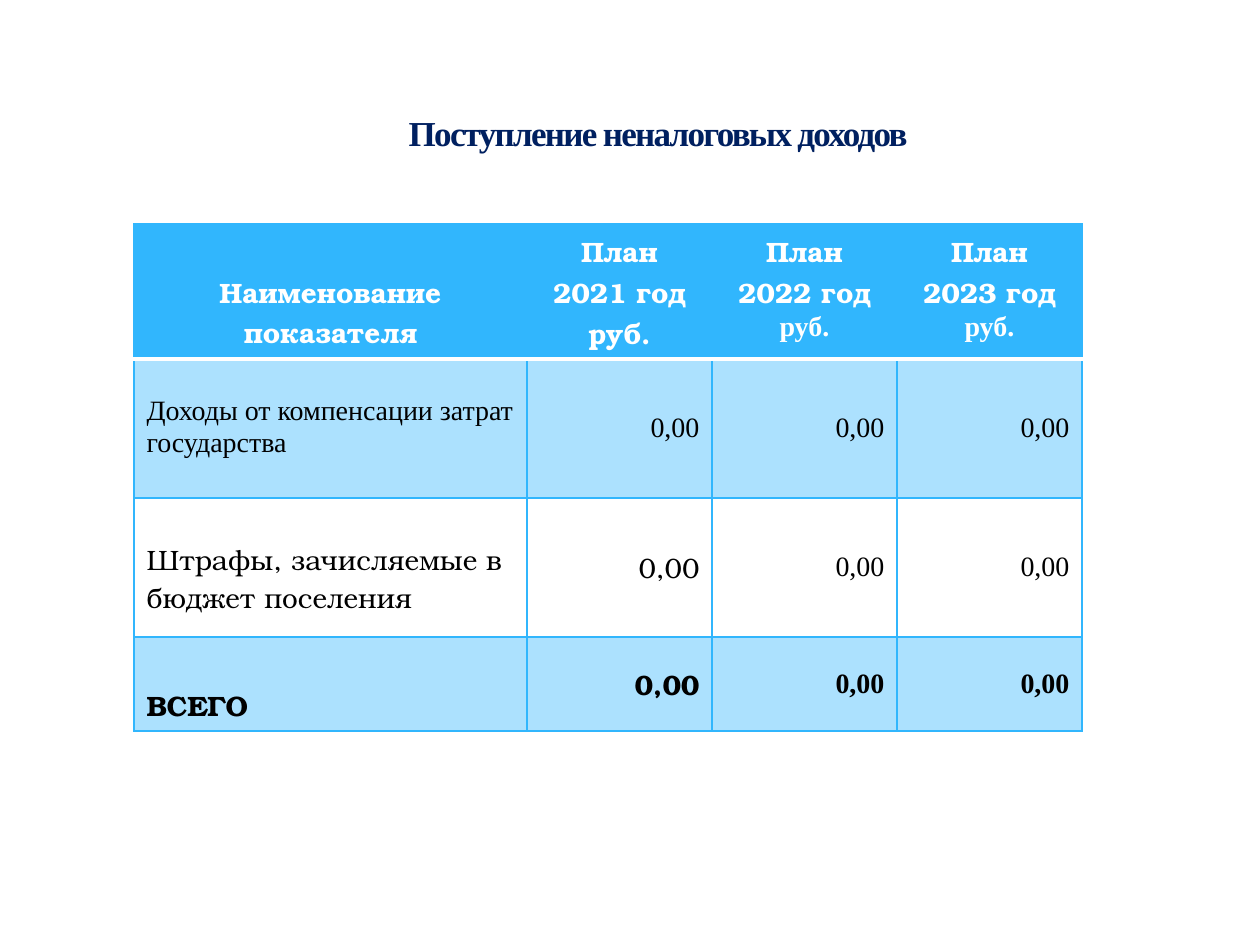
from lxml.etree import SubElement
from pptx import Presentation
from pptx.dml.color import RGBColor
from pptx.enum.text import MSO_ANCHOR as Anchor, PP_ALIGN as Align
from pptx.oxml import parse_xml
from pptx.oxml.ns import nsdecls, qn
from pptx.util import Pt

COLORS = {"navy": "002060", "blue": "31B6FD", "white": "FFFFFF", "black": "000000"}
SERIF, BONUM = "Times New Roman", "TeX Gyre Bonum"

TITLE = "Поступление неналоговых доходов"
# Each cell is a list of (text, font) paragraphs.
HEAD = [
    [("Наименование показателя", BONUM)],
    [("План 2021 год", BONUM), ("руб.", BONUM)],
    [("План 2022 год", BONUM), ("руб.", SERIF)],
    [("План 2023 год", BONUM), ("руб.", SERIF)],
]
# Label and its font, then the values with the font of the first one.
BODY = [
    ("Доходы от компенсации затрат государства", SERIF, SERIF),
    ("Штрафы, зачисляемые в бюджет поселения", BONUM, BONUM),
    ("ВСЕГО", BONUM, BONUM),
]
VALUES = [["0,00"] * 3 for _ in BODY]
COLS = [393, 185, 185, 185]
ROWS = [135, 139, 139, 94]
DROPS = [47, 37, 43, 47]  # top margin of the label in each row


def px(n):
    return round(n * 914400 / 126)


def color(name):
    return RGBColor.from_string(COLORS[name])


def border(cell, row):
    """Blue edges all round, with a thick white rule under the header."""
    props = cell._tc.get_or_add_tcPr()
    for i, side in enumerate("LRTB"):
        rule = (row, side) in ((0, "B"), (1, "T"))
        tint, width = ("white", 3) if rule else ("blue", 1)
        props.insert(i, parse_xml(
            f'<a:ln{side} {nsdecls("a")} w="{Pt(width)}"><a:solidFill>'
            f'<a:srgbClr val="{COLORS[tint]}"/></a:solidFill></a:ln{side}>'))


def paint(cell, row):
    """Solid header, then pale and clear rows in turn."""
    if row == 2:
        cell.fill.background()
        return
    cell.fill.solid()
    cell.fill.fore_color.rgb = color("blue")
    if row:
        tint = cell._tc.tcPr.find(qn("a:solidFill")).find(qn("a:srgbClr"))
        SubElement(tint, qn("a:alpha")).set("val", "40000")


def write(cell, lines, row, align):
    frame = cell.text_frame
    for i, (text, face) in enumerate(lines):
        para = frame.add_paragraph() if i else frame.paragraphs[0]
        para.text, para.alignment = text, align
        font = para.font
        font.name, font.size = face, Pt(16)
        font.bold = row in (0, len(BODY))
        font.color.rgb = color("black" if row else "white")


def main():
    deck = Presentation()
    deck.slide_width, deck.slide_height = px(1260), px(945)
    slide = deck.slides.add_slide(deck.slide_layouts[5])

    title = slide.shapes.title
    title.left, title.top, title.width, title.height = map(px, (174, 86, 968, 93))
    title.text_frame.text = TITLE
    title.text_frame.vertical_anchor = Anchor.MIDDLE
    para = title.text_frame.paragraphs[0]
    para.alignment = Align.CENTER
    font = para.font
    font.name, font.size, font.bold = SERIF, Pt(20), True
    font.color.rgb = color("navy")
    para.runs[0]._r.get_or_add_rPr().set("spc", "-100")

    grid = [HEAD]
    for (label, face, first), nums in zip(BODY, VALUES):
        faces = [first, SERIF, SERIF]
        grid.append([[(label, face)]] + [[pair] for pair in zip(nums, faces)])

    table = slide.shapes.add_table(
        len(ROWS), len(COLS), px(134), px(224), px(sum(COLS)), px(sum(ROWS))).table
    for col, width in zip(table.columns, COLS):
        col.width = px(width)
    for r, cells in enumerate(grid):
        table.rows[r].height = px(ROWS[r])
        for c, lines in enumerate(cells):
            cell = table.cell(r, c)
            if r == 0:
                align = Align.CENTER
            else:
                align = Align.RIGHT if c else Align.LEFT
            write(cell, lines, r, align)
            cell.vertical_anchor = Anchor.MIDDLE if r and c else Anchor.TOP
            if c == 0:
                cell.margin_top = px(DROPS[r])
            paint(cell, r)
            border(cell, r)

    deck.save("out.pptx")


if __name__ == "__main__":
    main()
